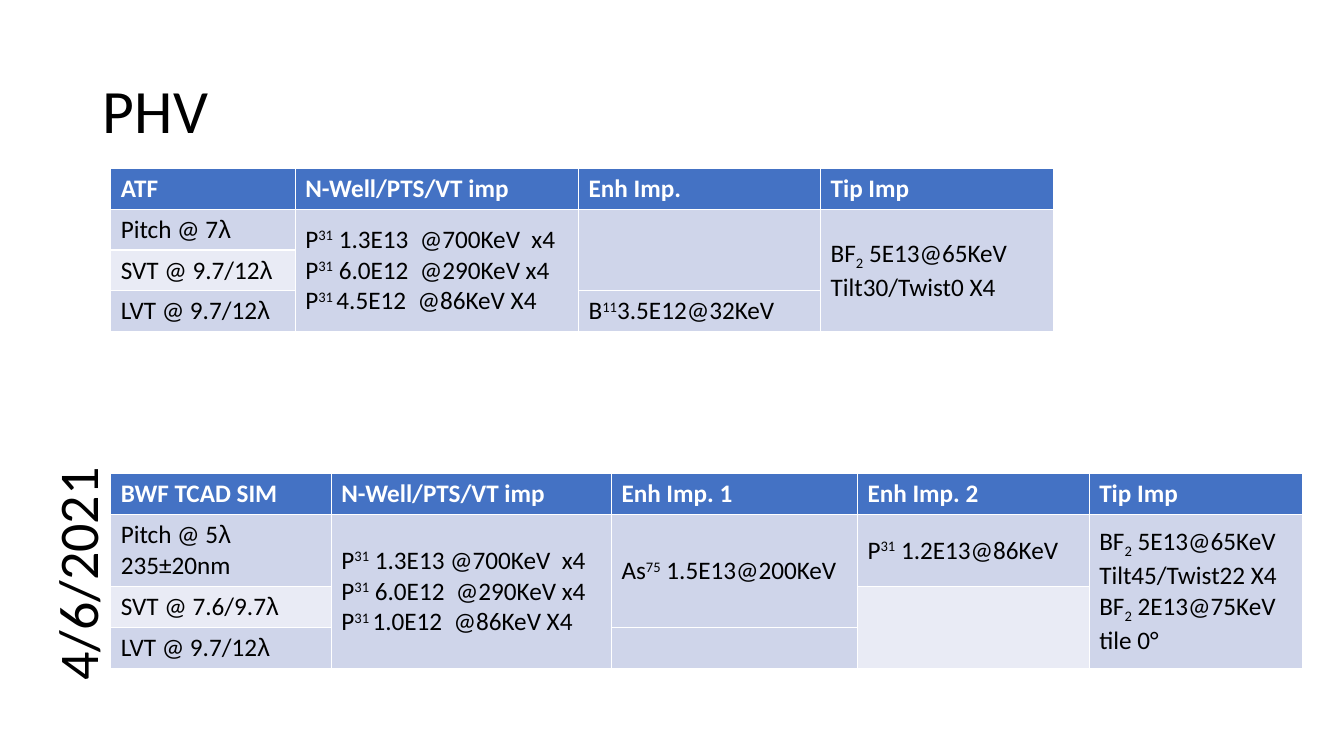
from dataclasses import dataclass

import pptx
import pptx.dml.color
import pptx.enum.text
import pptx.util

Cm = pptx.util.Cm
RGBColor = pptx.dml.color.RGBColor
MIDDLE = pptx.enum.text.MSO_ANCHOR.MIDDLE

BLACK = RGBColor(0x00, 0x00, 0x00)
WHITE = RGBColor(0xFF, 0xFF, 0xFF)
HEADER_BLUE = RGBColor(0x44, 0x72, 0xC4)
BAND_DARK = RGBColor(0xCF, 0xD5, 0xEA)
BAND_LIGHT = RGBColor(0xE9, 0xEB, 0xF5)

SUPERSCRIPT = 30000
SUBSCRIPT = -25000
TABLE_LEFT = 2.79
ROW_HEIGHT = 1.03


@dataclass
class TextRun:
    text: str
    baseline: int = 0
    font: str = "Calibri"


Line = list[TextRun]


@dataclass
class BodyCell:
    row: int
    column: int
    lines: list[Line]
    row_span: int = 1


@dataclass
class ImplantTable:
    top: float
    column_widths: list[float]
    row_heights: list[float]
    headers: list[str]
    cells: list[BodyCell]


def plain(text: str) -> Line:
    return [TextRun(text)]


def pitch(text: str) -> Line:
    return [TextRun(text), TextRun("λ", font="Arial")]


def isotope(element: str, mass: str, dose: str) -> Line:
    return [TextRun(element), TextRun(mass, SUPERSCRIPT), TextRun(dose)]


def fluoride(dose: str) -> Line:
    return [TextRun("BF"), TextRun("2", SUBSCRIPT), TextRun(dose)]


ATF_TABLE = ImplantTable(
    top=4.24,
    column_widths=[4.65, 7.14, 6.1, 5.87],
    row_heights=[ROW_HEIGHT] * 4,
    headers=["ATF", "N-Well/PTS/VT imp", "Enh Imp.", "Tip Imp"],
    cells=[
        BodyCell(1, 0, [pitch("Pitch @ 7")]),
        BodyCell(2, 0, [pitch("SVT @ 9.7/12")]),
        BodyCell(3, 0, [pitch("LVT @ 9.7/12")]),
        BodyCell(1, 1, [
            isotope("P", "31", " 1.3E13  @700KeV  x4"),
            isotope("P", "31", " 6.0E12  @290KeV x4"),
            isotope("P", "31 ", "4.5E12  @86KeV X4"),
        ], row_span=3),
        BodyCell(1, 2, [], row_span=2),
        BodyCell(3, 2, [isotope("B", "11", "3.5E12@32KeV")]),
        BodyCell(1, 3, [fluoride(" 5E13@65KeV Tilt30/Twist0 X4")], row_span=3),
    ],
)

BWF_TABLE = ImplantTable(
    top=11.94,
    column_widths=[5.56, 7.06, 6.2, 5.84, 5.38],
    row_heights=[ROW_HEIGHT, 1.77, ROW_HEIGHT, ROW_HEIGHT],
    headers=["BWF TCAD SIM", "N-Well/PTS/VT imp", "Enh Imp. 1", "Enh Imp. 2", "Tip Imp"],
    cells=[
        BodyCell(1, 0, [pitch("Pitch @ 5"), plain("235±20nm")]),
        BodyCell(2, 0, [pitch("SVT @ 7.6/9.7")]),
        BodyCell(3, 0, [pitch("LVT @ 9.7/12")]),
        BodyCell(1, 1, [
            isotope("P", "31", " 1.3E13 @700KeV  x4"),
            isotope("P", "31", " 6.0E12  @290KeV x4"),
            isotope("P", "31 ", "1.0E12  @86KeV X4"),
        ], row_span=3),
        BodyCell(1, 2, [isotope("As", "75", " 1.5E13@200KeV")], row_span=2),
        BodyCell(3, 2, []),
        BodyCell(1, 3, [isotope("P", "31", " 1.2E13@86KeV")]),
        BodyCell(2, 3, [], row_span=2),
        BodyCell(1, 4, [
            fluoride(" 5E13@65KeV Tilt45/Twist22 X4"),
            fluoride(" 2E13@75KeV tile 0°"),
        ], row_span=3),
    ],
)


def write_lines(text_frame, lines: list[Line], size: float, color: RGBColor = BLACK,
                bold: bool = False) -> None:
    for index, line in enumerate(lines):
        paragraph = text_frame.add_paragraph() if index else text_frame.paragraphs[0]
        for text_run in line:
            run = paragraph.add_run()
            run.text = text_run.text
            run.font.name = text_run.font
            run.font.size = pptx.util.Pt(size)
            run.font.bold = bold
            run.font.color.rgb = color
            if text_run.baseline:
                run._r.get_or_add_rPr().set("baseline", str(text_run.baseline))


def fill_cell(cell, fill: RGBColor, lines: list[Line], color: RGBColor, bold: bool) -> None:
    cell.fill.solid()
    cell.fill.fore_color.rgb = fill
    cell.vertical_anchor = MIDDLE
    write_lines(cell.text_frame, lines, 18, color, bold)


def add_implant_table(slide, implant: ImplantTable) -> None:
    table = slide.shapes.add_table(
        len(implant.row_heights), len(implant.column_widths),
        Cm(TABLE_LEFT), Cm(implant.top),
        Cm(sum(implant.column_widths)), Cm(sum(implant.row_heights)),
    ).table
    for column, width in zip(table.columns, implant.column_widths):
        column.width = Cm(width)
    for row, height in zip(table.rows, implant.row_heights):
        row.height = Cm(height)
    for index, header in enumerate(implant.headers):
        fill_cell(table.cell(0, index), HEADER_BLUE, [plain(header)], WHITE, True)
    for body in implant.cells:
        cell = table.cell(body.row, body.column)
        if body.row_span > 1:
            cell.merge(table.cell(body.row + body.row_span - 1, body.column))
        band = BAND_DARK if body.row % 2 else BAND_LIGHT
        fill_cell(cell, band, body.lines, BLACK, False)


def add_title(slide) -> None:
    title = slide.shapes.title
    title.left, title.top, title.width, title.height = Cm(2.34), Cm(1.02), Cm(29.21), Cm(3.68)
    title.text_frame.vertical_anchor = MIDDLE
    write_lines(title.text_frame, [plain("PHV")], 44)
    paragraph = title.text_frame.paragraphs[0]
    paragraph.alignment = pptx.enum.text.PP_ALIGN.LEFT
    paragraph.line_spacing = 0.9


def add_date(slide) -> None:
    date = slide.shapes.add_textbox(Cm(-1.32), Cm(13.18), Cm(6.48), Cm(1.96))
    date.rotation = 270
    date.text_frame.word_wrap = True
    date.text_frame.auto_size = pptx.enum.text.MSO_AUTO_SIZE.SHAPE_TO_FIT_TEXT
    write_lines(date.text_frame, [plain("4/6/2021")], 40)


def main() -> None:
    presentation = pptx.Presentation()
    presentation.slide_width = Cm(33.87)
    presentation.slide_height = Cm(19.05)
    slide = presentation.slides.add_slide(presentation.slide_layouts[5])
    add_title(slide)
    add_implant_table(slide, BWF_TABLE)
    add_date(slide)
    add_implant_table(slide, ATF_TABLE)
    presentation.save("out.pptx")


if __name__ == "__main__":
    main()
